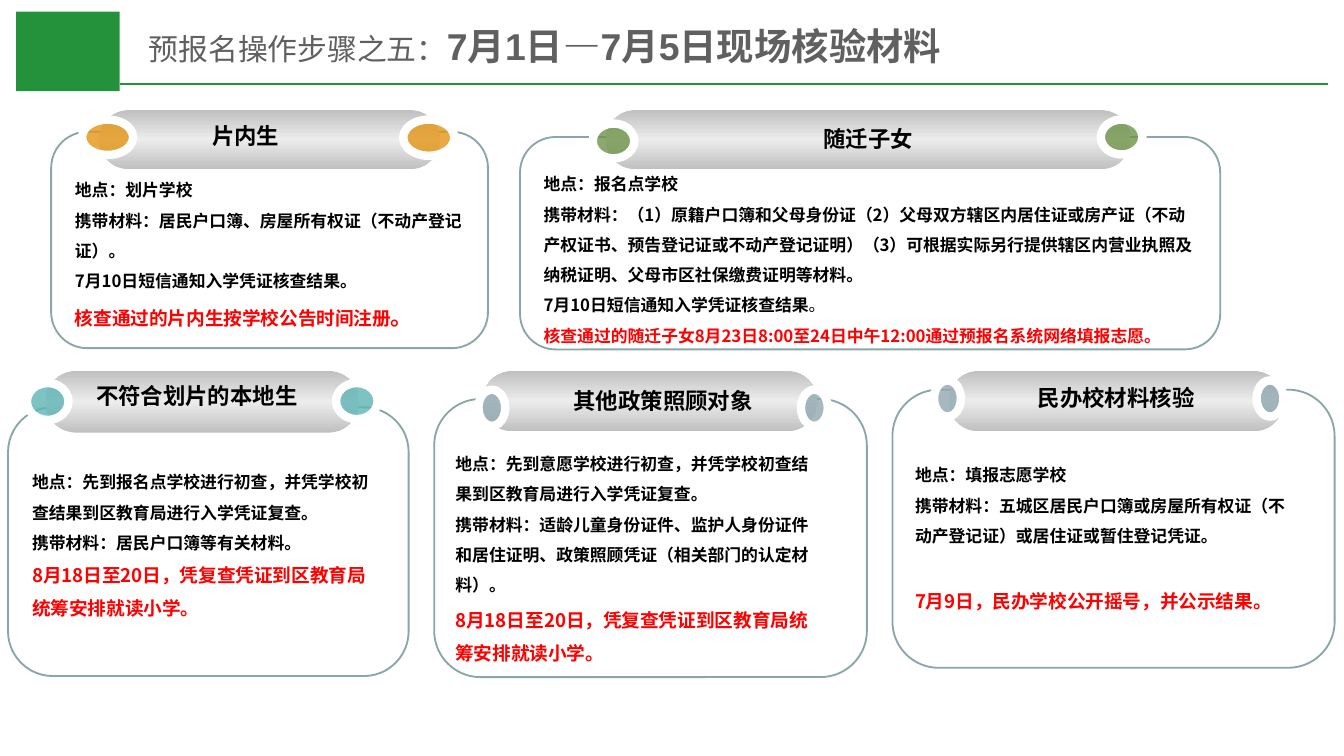
from copy import deepcopy

from lxml import etree
from pptx import Presentation
from pptx.dml.color import RGBColor
from pptx.enum.shapes import MSO_CONNECTOR, MSO_SHAPE
from pptx.enum.text import MSO_ANCHOR, PP_ALIGN
from pptx.oxml.ns import qn
from pptx.util import Pt

RECT, ROUNDED, OVAL = MSO_SHAPE.RECTANGLE, MSO_SHAPE.ROUNDED_RECTANGLE, MSO_SHAPE.OVAL
STRAIGHT = MSO_CONNECTOR.STRAIGHT
TOP, MIDDLE, BOTTOM = MSO_ANCHOR.TOP, MSO_ANCHOR.MIDDLE, MSO_ANCHOR.BOTTOM
LEFT, CENTER = PP_ALIGN.LEFT, PP_ALIGN.CENTER

COLORS = {
    "green": "24923B", "title": "606060", "border": "8AA6A8", "white": "FFFFFF",
    "black": "000000", "red": "FF0000", "silver": "C0C0C0", "shine": "ECECEC",
    "orange": "E49514", "olive": "6E9349", "teal": "5EB4B4", "slate": "90A8B0",
}
CJK = "Noto Sans CJK SC"

# Content: lengths in points, boxes as left, top, width, height
TITLE = [("预报名操作步骤之五：", 16, False), ("7月1日—7月5日现场核验材料", 20, True)]

# Lines are (runs, line pitch, space before); runs are (text, size, color, bold)
def plain(text):
    return [(text, 9, "black", True)], 16.2, 0


def notice(text, before=0):
    return [(text, 10, "red", True)], 17.7, before


# "body" is a separate text box; without it the text sits inside the panel
SECTIONS = [
    {"heading": "片内生", "accent": "orange",
     "panel": (27.4, 70.6, 234, 115.9), "body": None, "text_top": 91,
     "pill": (53.3, 59, 182.2, 31.7), "label": (59, 61.9, 145.4, 21.6),
     "knobs": [(43.9, 64.1, 27.4, 18.9), (216, 64.1, 27.4, 19.4)],
     "lines": [plain("地点：划片学校"),
               plain("携带材料：居民户口簿、房屋所有权证（不动产登记证）。"),
               plain("7月10日短信通知入学凭证核查结果。"),
               ([("核查通过的片内生按学校公告时间注册", 10, "red", True),
                 ("。", 12, "red", True)], 21, 0)]},
    {"heading": "随迁子女", "accent": "olive",
     "panel": (278.6, 73.4, 375.1, 113.8), "body": None, "text_top": 87.8,
     "pill": (324.7, 59, 280.8, 31.7), "label": (356.4, 63.4, 217.4, 21.6),
     "knobs": [(317.5, 66.2, 22.3, 18.7), (589.7, 64.1, 22.3, 18.7)],
     "lines": [plain("地点：报名点学校"),
               plain("携带材料：（1）原籍户口簿和父母身份证（2）父母双方辖区内居住证或房产证"
                     "（不动产权证书、预告登记证或不动产登记证明）（3）可根据实际另行提供辖区内"
                     "营业执照及纳税证明、父母市区社保缴费证明等材料。"),
               ([("7月10日短信通知入学凭证核查结果", 9, "black", True),
                 ("。", 9, "black", False)], 16.2, 0),
               ([("核查通过的随迁子女8月23日8:00至24日中午12:00通过预报名系统网络填报志愿。",
                  9, "red", True)], 16.2, 0)]},
    {"heading": "不符合划片的本地生", "accent": "teal",
     "panel": (4.3, 218.2, 214.6, 144), "body": (10.1, 243.4, 202.3, 92.9),
     "text_top": 247.5,
     "pill": (24.5, 198.7, 167.8, 33.1), "label": (33.1, 200.9, 144.7, 21.6),
     "knobs": [(14.4, 205.2, 22.3, 19.8), (180, 205.2, 22.3, 19.4)],
     "lines": [plain("地点：先到报名点学校进行初查，并凭学校初查结果到区教育局进行入学凭证复查。"),
               plain("携带材料：居民户口簿等有关材料。"),
               notice("8月18日至20日，凭复查凭证到区教育局统筹安排就读小学。")]},
    {"heading": "其他政策照顾对象", "accent": "slate",
     "panel": (232.6, 213.8, 231.8, 149), "body": (236.9, 234, 211.7, 127.4),
     "text_top": 237.8,
     "pill": (258.5, 198.7, 179.3, 32.4), "label": (285.8, 203.8, 139, 21.6),
     "knobs": [(256.3, 208.8, 14.4, 19.4), (429.1, 208.8, 14.4, 19.4)],
     "lines": [plain("地点：先到意愿学校进行初查，并凭学校初查结果到区教育局进行入学凭证复查。"),
               plain("携带材料：适龄儿童身份证件、监护人身份证件和居住证明、政策照顾凭证"
                     "（相关部门的认定材料）。"),
               notice("8月18日至20日，凭复查凭证到区教育局统筹安排就读小学。", 1.5)]},
    {"heading": "民办校材料核验", "accent": "slate",
     "panel": (478.1, 208.8, 236.9, 149), "body": (483.1, 229, 216.7, 108.7),
     "text_top": 243.7,
     "pill": (508.3, 198.7, 179.3, 32.4), "label": (528.5, 202.3, 139, 21.6),
     "knobs": [(500.4, 203.8, 14.4, 19.4), (673.2, 203.8, 14.4, 19.4)],
     "lines": [plain("地点：填报志愿学校"),
               plain("携带材料：五城区居民户口簿或房屋所有权证（不动产登记证）或居住证或暂住登记凭证。"),
               notice("7月9日，民办学校公开摇号，并公示结果。", 18)]},
]


def rgb(name):
    return RGBColor.from_string(COLORS[name])


def add_shape(kind, box, fill=None, line=None, width=1):
    shape = slide.shapes.add_shape(kind, *map(Pt, box))
    shape.shadow.inherit = False
    if fill:
        shape.fill.solid()
        shape.fill.fore_color.rgb = rgb(fill)
    else:
        shape.fill.background()
    if line:
        shape.line.color.rgb = rgb(line)
        shape.line.width = Pt(width)
    else:
        shape.line.fill.background()
    return shape


def set_frame(shape, anchor, top=0, bottom=0, right=7.2):
    frame = shape.text_frame
    frame.word_wrap = True
    frame.vertical_anchor = anchor
    frame.margin_top, frame.margin_bottom = Pt(top), Pt(bottom)
    frame.margin_right = Pt(right)
    return frame


def add_run(paragraph, text, size, color, bold, font=CJK):
    run = paragraph.add_run()
    run.text = text
    run.font.size, run.font.bold, run.font.name = Pt(size), bold, font
    run.font.color.rgb = rgb(color)
    etree.SubElement(run.font._element, qn("a:ea"), typeface=CJK)


def add_pill(box):
    pill = add_shape(ROUNDED, box)
    pill.adjustments[0] = 0.5
    pill.fill.gradient()
    pill.fill.gradient_angle = 90
    first, last = pill.fill.gradient_stops
    first.color.rgb = last.color.rgb = rgb("silver")
    first.position, last.position = 0, 1
    stops = pill._element.spPr.find(".//" + qn("a:gsLst"))
    shine = deepcopy(stops[0])
    shine.set("pos", "50000")
    shine[0].set("val", COLORS["shine"])
    stops.insert(1, shine)


def add_knob(box, accent):
    knob = add_shape(OVAL, box, accent, "white", 4.5)
    color = knob._element.spPr.find(qn("a:solidFill"))[0]
    etree.SubElement(color, qn("a:alpha"), val="80000")


def add_body(panel, section):
    top = section["text_top"]
    if section["body"]:
        holder = slide.shapes.add_textbox(*map(Pt, section["body"]))
        frame = set_frame(holder, TOP, top - section["body"][1])
    else:
        corner_inset = 0.29 * 0.1667 * section["panel"][3]
        frame = set_frame(panel, TOP, top - section["panel"][1] - corner_inset, right=6)
    for i, (runs, pitch, before) in enumerate(section["lines"]):
        paragraph = frame.add_paragraph() if i else frame.paragraphs[0]
        paragraph.alignment = LEFT
        paragraph.line_spacing = Pt(pitch)
        if before:
            paragraph.space_before = Pt(before)
        for run in runs:
            add_run(paragraph, *run)


prs = Presentation()
prs.slide_width, prs.slide_height = Pt(720), Pt(405)
slide = prs.slides.add_slide(prs.slide_layouts[6])

# Title band
add_shape(RECT, (8.6, 6.3, 55.6, 42.5), "green")
rule = slide.shapes.add_connector(STRAIGHT, Pt(64.2), Pt(44.8), Pt(711.4), Pt(44.8))
rule.line.color.rgb = rgb("green")
rule.line.width = Pt(1)
etree.SubElement(rule._element.spPr, qn("a:effectLst"))
title = slide.shapes.add_textbox(Pt(72.7), Pt(10.8), Pt(612), Pt(27.4))
title_line = set_frame(title, BOTTOM, bottom=1.8).paragraphs[0]
for text, size, bold in TITLE:
    add_run(title_line, text, size, "title", bold, "Arial")

# Panels with their details
for section in SECTIONS:
    panel = add_shape(ROUNDED, section["panel"], line="border")
    add_body(panel, section)

# Heading pills with a knob at each end
for section in SECTIONS:
    add_pill(section["pill"])
    label = slide.shapes.add_textbox(*map(Pt, section["label"]))
    heading = set_frame(label, MIDDLE).paragraphs[0]
    heading.alignment = CENTER
    add_run(heading, section["heading"], 12, "black", True)
    for knob in section["knobs"]:
        add_knob(knob, section["accent"])

prs.save("out.pptx")
